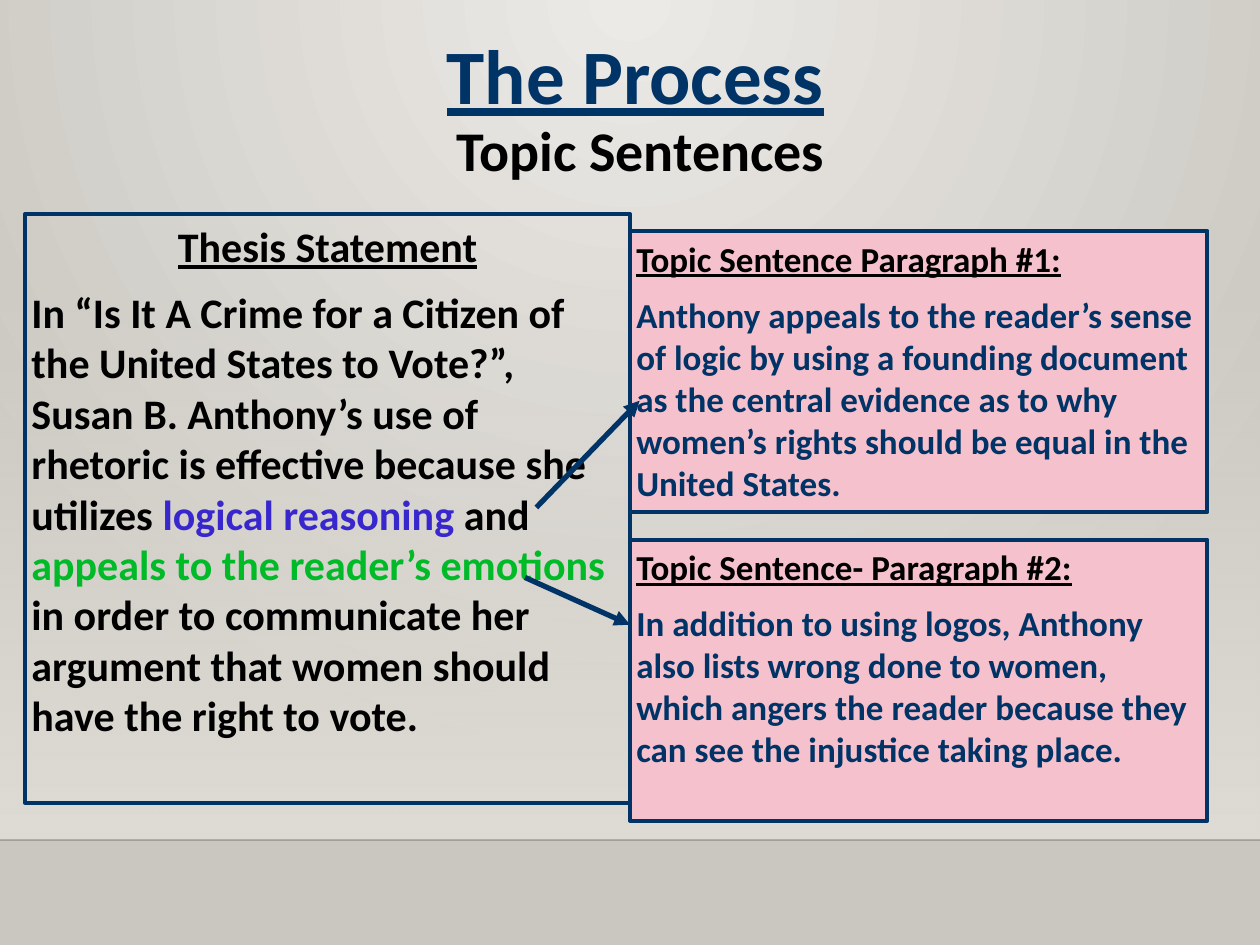
"""Builds the slide on topic sentences drawn from a thesis statement."""
from pptx import Presentation
from pptx.dml.color import RGBColor
from pptx.enum import shapes, text
from pptx.oxml import parse_xml
from pptx.oxml.ns import nsdecls, qn
from pptx.util import Pt

HUES = {
    "navy": "003366", "black": "000000", "pink": "F5C1CD",
    "violet": "3927CE", "green": "00BA27",
    "light": "ECEAE7", "dark": "CAC7C1", "floor": "DFDBD5",
}
FONT = "Calibri"
TITLE = ("The Process", (198, 11.5, 330, 60.5))
TOPIC = ("Topic Sentences", (36, 62.6, 660, 46))
THESIS = ("Thesis Statement", [
    ("In “Is It A Crime for a Citizen of the United States to Vote?”, Susan B. "
     "Anthony’s use of rhetoric is effective because she utilizes ", "black"),
    ("logical reasoning", "violet"),
    (" and", "black"),
    (" appeals to the reader’s emotions", "green"),
    (" in order to communicate her argument that women should have the right to vote.",
     "black"),
])
POINTS = [
    ("Topic Sentence Paragraph #1:", [
        ("Anthony appeals to the reader’s sense of logic by using a founding document as "
         "the central evidence as to why women’s rights should be equal in the United "
         "States.", "navy")]),
    ("Topic Sentence- Paragraph #2:", [
        ("In addition to using logos, Anthony also lists wrong done to women, which angers "
         "the reader because they can see the injustice taking place.", "navy")]),
]
ARROWS = [(306.5, 290, 365.5, 229), (300, 330, 360, 357)]
WIDE, HIGH, BASE = 720, 540, 480


def rgb(name):
    return RGBColor.from_string(HUES[name])


def shade(fill, root, stops, way):
    fill.gradient()
    old = next(root.iter(qn("a:gradFill")))
    marks = "".join(
        f'<a:gs pos="{pos}"><a:srgbClr val="{HUES[hue]}"><a:alpha val="{alpha}"/>'
        "</a:srgbClr></a:gs>" for pos, hue, alpha in stops)
    new = parse_xml(f'<a:gradFill {nsdecls("a")} rotWithShape="1">'
                    f"<a:gsLst>{marks}</a:gsLst>{way}</a:gradFill>")
    old.getparent().replace(old, new)


def frame(shape, anchor=text.MSO_ANCHOR.TOP):
    body = shape.text_frame
    body.word_wrap = True
    body.auto_size = text.MSO_AUTO_SIZE.NONE
    body.vertical_anchor = anchor
    body.margin_left = body.margin_top = body.margin_right = body.margin_bottom = Pt(3.6)
    return body


def style(para, size, align, hue=None, under=False, gap=0):
    para.alignment = align
    para.space_before = Pt(gap)
    font = para.font
    font.name, font.size, font.bold, font.underline = FONT, Pt(size), True, under
    if hue:
        font.color.rgb = rgb(hue)


def panel(pile, spot, words, size, gap, align, hue=None):
    box = pile.add_shape(shapes.MSO_SHAPE.RECTANGLE, *map(Pt, spot))
    box.shadow.inherit = False
    if hue:
        box.fill.solid()
        box.fill.fore_color.rgb = rgb(hue)
    else:
        box.fill.background()
    box.line.color.rgb, box.line.width = rgb("navy"), Pt(2.25)
    body = frame(box)
    head, parts = words
    para = body.paragraphs[0]
    para.text = head
    style(para, size, align, "black", under=True)
    para = body.add_paragraph()
    for part, tint in parts:
        run = para.add_run()
        run.text = part
        run.font.color.rgb = rgb(tint)
    style(para, size, text.PP_ALIGN.LEFT, gap=gap)


def rule(pile, ends, hue, width):
    line = pile.add_connector(shapes.MSO_CONNECTOR.STRAIGHT, *map(Pt, ends))
    line.line.color.rgb, line.line.width = rgb(hue), Pt(width)
    props = line._element.spPr
    props.append(parse_xml(f'<a:effectLst {nsdecls("a")}/>'))
    return props.find(qn("a:ln"))


def main():
    deck = Presentation()
    deck.slide_width, deck.slide_height = Pt(WIDE), Pt(HIGH)
    slide = deck.slides.add_slide(deck.slide_layouts[5])
    pile = slide.shapes
    mid, left = text.PP_ALIGN.CENTER, text.PP_ALIGN.LEFT

    shade(slide.background.fill, slide._element,
          [(0, "light", 100000), (100000, "dark", 100000)],
          '<a:path path="circle"><a:fillToRect l="43000" t="0" r="43000" b="100000"/></a:path>')
    floor = pile.add_shape(shapes.MSO_SHAPE.RECTANGLE, 0, Pt(158.5), Pt(WIDE), Pt(BASE - 158.5))
    floor.shadow.inherit = False
    floor.line.fill.background()
    shade(floor.fill, floor._element, [(0, "floor", 0), (100000, "floor", 100000)],
          '<a:lin ang="5400000" scaled="0"/>')
    edge = rule(pile, (0, BASE, WIDE, BASE), "black", 1)
    next(edge.iter(qn("a:srgbClr"))).append(
        parse_xml(f'<a:alpha {nsdecls("a")} val="20000"/>'))

    panel(pile, (14.4, 122.4, 345.6, 336.4), THESIS, 24, 9, mid)

    title = pile.title
    words, spot = TITLE
    title.left, title.top, title.width, title.height = map(Pt, spot)
    para = frame(title, text.MSO_ANCHOR.BOTTOM).paragraphs[0]
    para.text = words
    style(para, 44, mid, "navy", under=True)

    words, spot = TOPIC
    para = frame(pile.add_textbox(*map(Pt, spot))).paragraphs[0]
    para.text = words
    style(para, 32, mid, "black")

    for row, point in enumerate(POINTS):
        panel(pile, (360, 132 + row * 176.4, 330, 160.6), point, 20, 8, left, "pink")
    for ends in ARROWS:
        rule(pile, ends, "navy", 3).append(
            parse_xml(f'<a:tailEnd {nsdecls("a")} type="triangle"/>'))
    deck.save("out.pptx")


if __name__ == "__main__":
    main()
